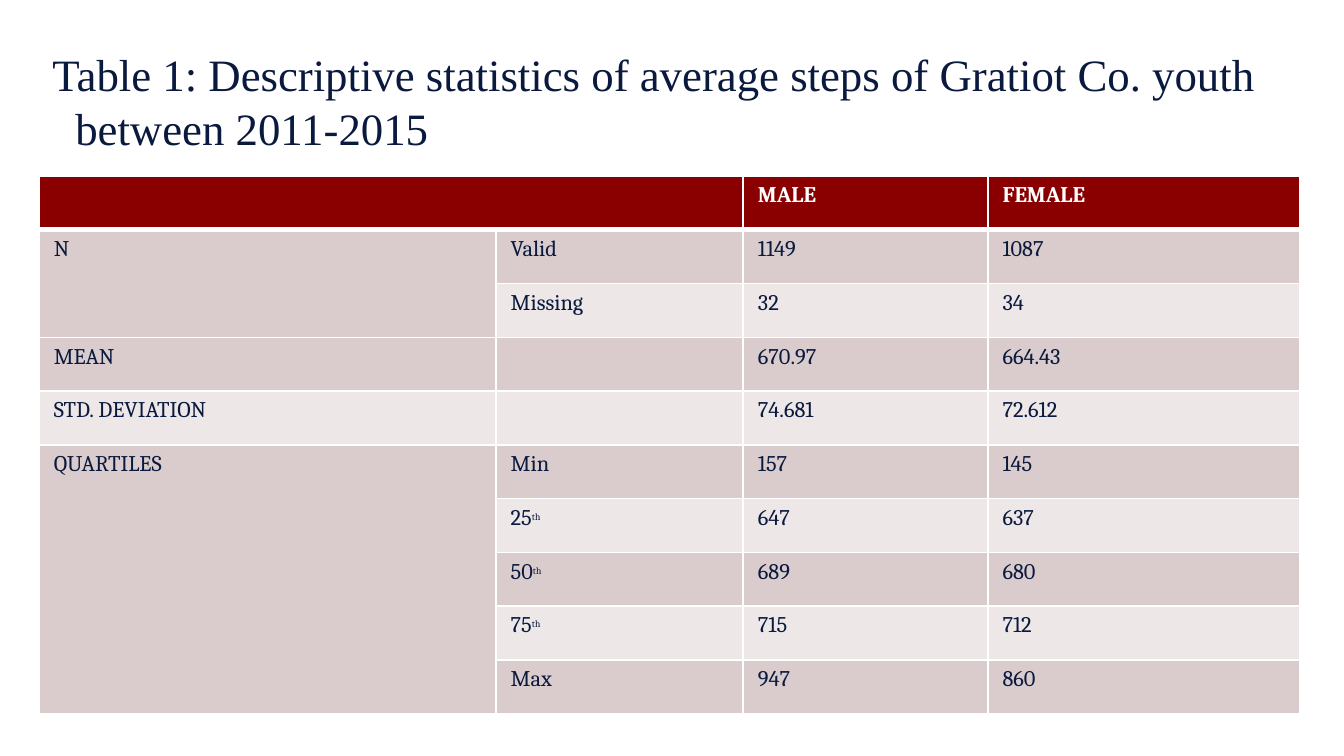
from lxml.etree import fromstring
from pptx import Presentation
from pptx.dml.color import RGBColor
from pptx.enum.text import MSO_ANCHOR, MSO_AUTO_SIZE, PP_ALIGN
from pptx.oxml.ns import nsdecls
from pptx.util import Inches, Pt

COLORS = {"ink": "0A193E", "head": "8A0000", "white": "FFFFFF",
          "dark": "DACCCC", "light": "EDE7E7"}
ROWS = [
    ("", "", "MALE", "FEMALE"),
    ("N", "Valid", "1149", "1087"),
    ("", "Missing", "32", "34"),
    ("MEAN", "", "670.97", "664.43"),
    ("STD. DEVIATION", "", "74.681", "72.612"),
    ("QUARTILES", "Min", "157", "145"),
    ("", "25th", "647", "637"),
    ("", "50th", "689", "680"),
    ("", "75th", "715", "712"),
    ("", "Max", "947", "860"),
]
WIDTHS = [3.4, 1.84, 1.82, 2.32]
MERGES = [(0, 0, 0, 1), (1, 0, 2, 0), (5, 0, 9, 0)]


def style(font, name, size, color, bold=False):
    font.name, font.size, font.bold = name, Pt(size), bold
    font.color.rgb = RGBColor.from_string(COLORS[color])


def border(cell, side, points):
    """Draw a white line on one side of a cell: L, R, T or B."""
    line = fromstring(
        f'<a:ln{side} {nsdecls("a")} w="{Pt(points)}"><a:solidFill>'
        f'<a:srgbClr val="{COLORS["white"]}"/></a:solidFill></a:ln{side}>')
    cell._tc.get_or_add_tcPr().append(line)


deck = Presentation()
deck.slide_width, deck.slide_height = Inches(10), Inches(5.625)
slide = deck.slides.add_slide(deck.slide_layouts[5])

# Title with a hanging indent on its second line
title = slide.shapes.title
title.left, title.top = Inches(0.29), Inches(0.3)
title.width, title.height = Inches(9.38), Inches(0.91)
frame = title.text_frame
frame.text = ("Table 1: Descriptive statistics of average steps of "
              "Gratiot Co. youth between 2011-2015")
frame.word_wrap = True
frame.auto_size = MSO_AUTO_SIZE.NONE
frame.vertical_anchor = MSO_ANCHOR.TOP
para = frame.paragraphs[0]
para.alignment = PP_ALIGN.LEFT
props = para._p.get_or_add_pPr()
props.set("marL", str(Inches(0.17)))
props.set("indent", str(-Inches(0.17)))
style(para.font, "Times New Roman", 24, "ink")

# Statistics table
table = slide.shapes.add_table(len(ROWS), len(WIDTHS), Inches(0.29), Inches(1.31),
                               Inches(sum(WIDTHS)), Inches(4.02)).table
table.horz_banding = False
for column, width in zip(table.columns, WIDTHS):
    column.width = Inches(width)

for r, row in enumerate(ROWS):
    table.rows[r].height = Inches(0.4)
    fill = "head" if r == 0 else "dark" if r % 2 else "light"
    for c, text in enumerate(row):
        cell = table.cell(r, c)
        cell.margin_left = cell.margin_right = Inches(0.11)
        for side in "LRTB":
            border(cell, side, 3 if (r, side) in ((0, "B"), (1, "T")) else 1)
        cell.fill.solid()
        cell.fill.fore_color.rgb = RGBColor.from_string(COLORS[fill])
        para = cell.text_frame.paragraphs[0]
        style(para.font, "Cambria", 12, "ink" if r else "white", r == 0)
        if text:
            para.add_run().text = text.removesuffix("th")
        if text.endswith("th"):
            suffix = para.add_run()
            suffix.text = "th"
            suffix.font.size = Pt(9)
            suffix._r.get_or_add_rPr().set("baseline", "30000")

for top, left, bottom, right in MERGES:
    table.cell(top, left).merge(table.cell(bottom, right))

deck.save("out.pptx")
